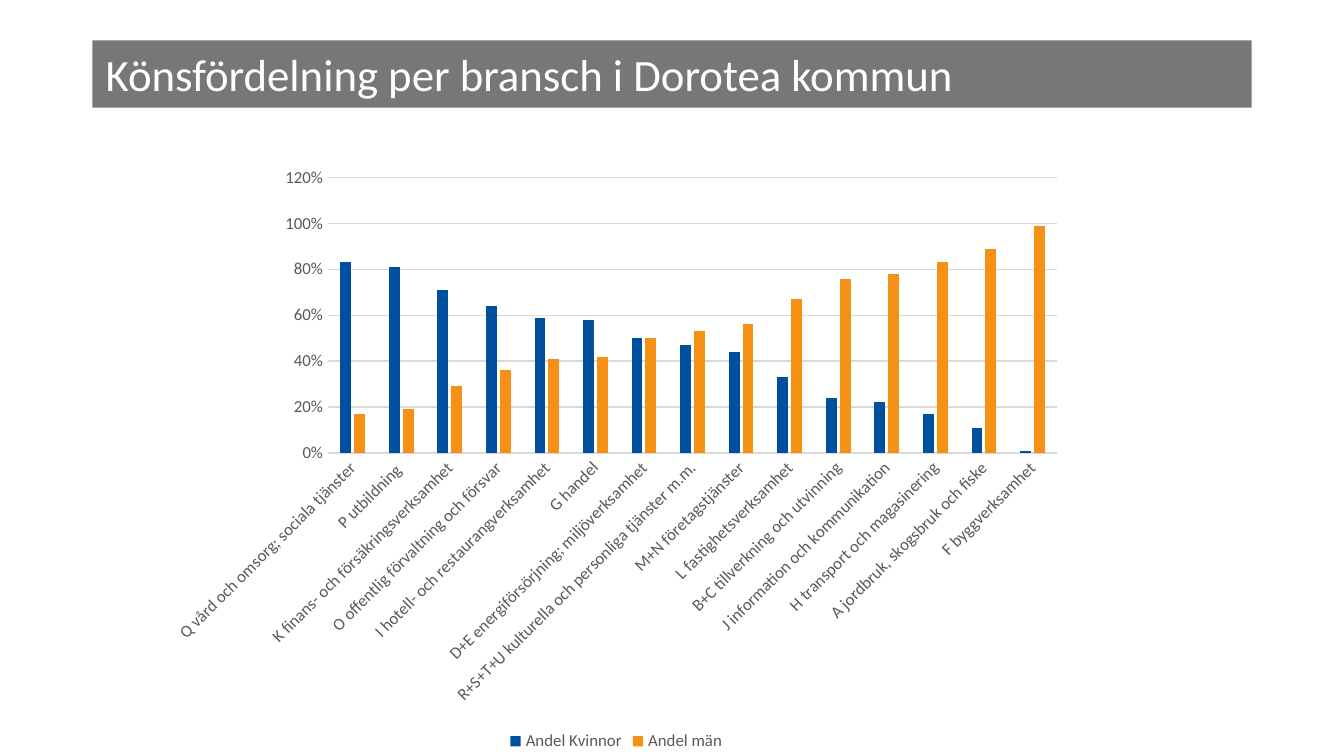
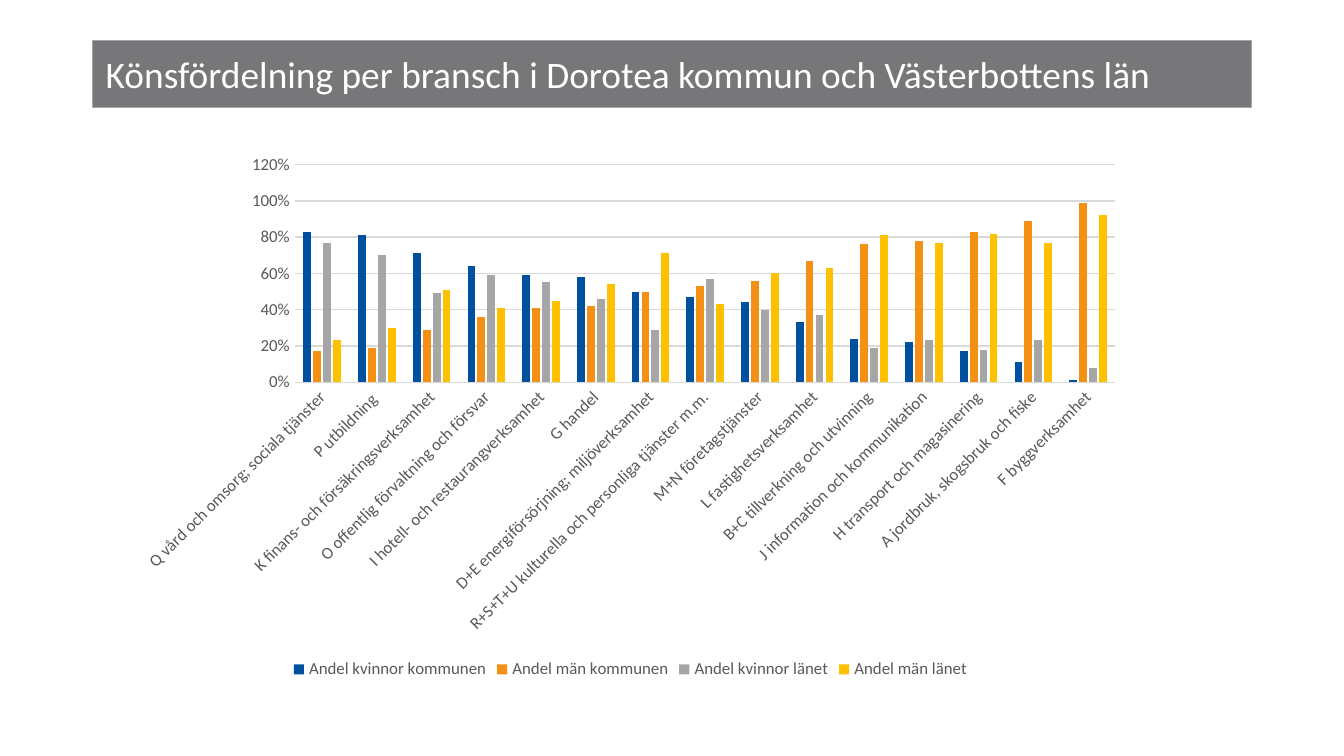
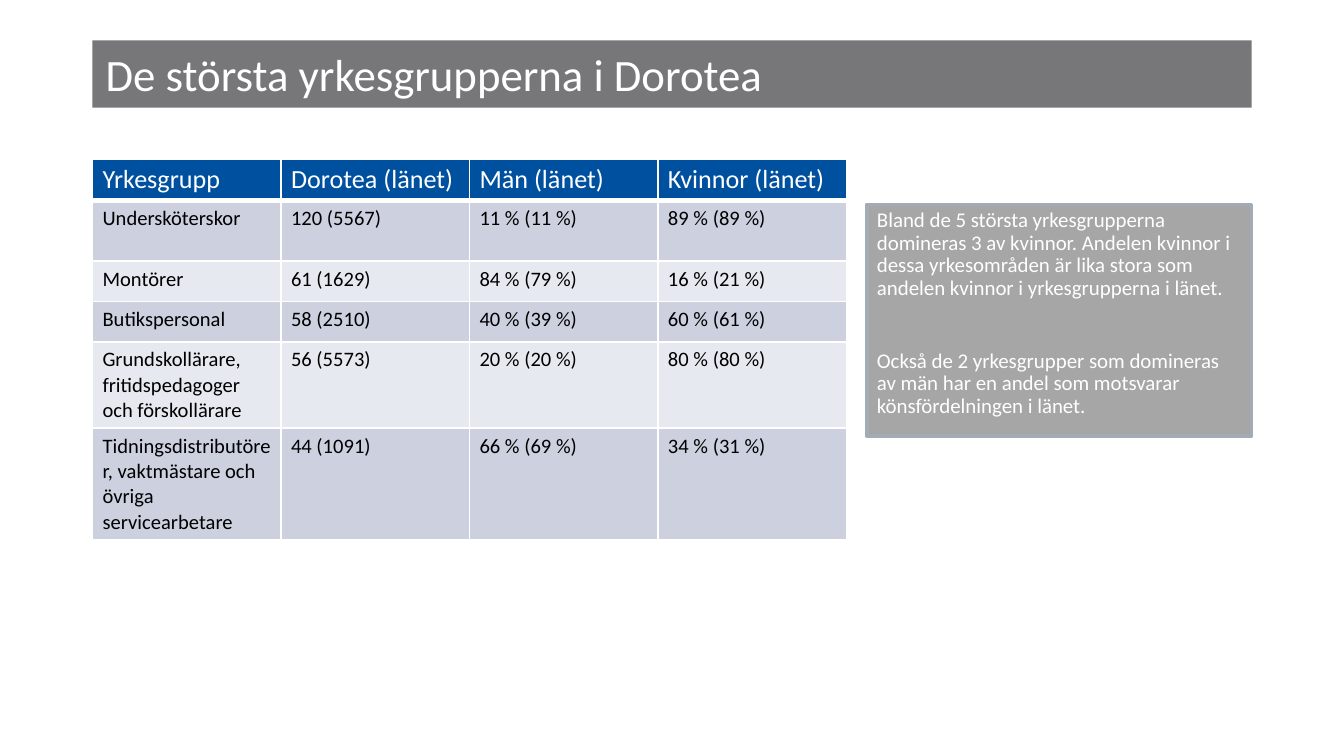
from dataclasses import dataclass

from lxml import etree
from pptx import Presentation
from pptx import util as u
from pptx.chart.data import CategoryChartData
from pptx.dml.color import RGBColor
from pptx.enum import chart as charts, shapes, text
from pptx.oxml.ns import qn


@dataclass(frozen=True)
class Theme:
    """Colours, type sizes and slide measures shared by all slides."""
    font: str = "Calibri"
    white: str = "FFFFFF"
    black: str = "000000"
    blue: str = "0050A0"
    orange: str = "F49014"
    yellow: str = "FFC000"
    grey: str = "A6A6A6"
    title_band: str = "77777A"
    note_edge: str = "A3ABB6"
    axis_text: str = "595959"
    axis_line: str = "D9D9D9"
    row_tints: tuple = ("CCD0DF", "E7E9F0")
    title_size: float = 24
    long_title_size: float = 20
    header_size: float = 14
    cell_size: float = 11
    note_size: float = 11.2
    chart_size: float = 9
    inset_x: float = 5.4
    inset_y: float = 2.7
    width: float = 10
    height: float = 10 * 9 / 16


THEME = Theme()

INDUSTRIES = [
    "Q vård och omsorg; sociala tjänster", "P utbildning ",
    "K finans- och försäkringsverksamhet", "O offentlig förvaltning och försvar",
    "I hotell- och restaurangverksamhet", "G handel",
    "D+E energiförsörjning; miljöverksamhet",
    "R+S+T+U kulturella och personliga tjänster m.m.", "M+N företagstjänster",
    "L fastighetsverksamhet", "B+C tillverkning och utvinning",
    "J information och kommunikation", "H transport och magasinering",
    "A jordbruk, skogsbruk och fiske", "F byggverksamhet",
]
WOMEN_MUNICIPALITY = [0.83, 0.81, 0.71, 0.64, 0.59, 0.58, 0.5, 0.47, 0.44,
                      0.33, 0.24, 0.22, 0.17, 0.11, 0.01]
WOMEN_COUNTY = [0.77, 0.7, 0.49, 0.59, 0.55, 0.46, 0.29, 0.57, 0.4,
                0.37, 0.19, 0.23, 0.18, 0.23, 0.08]
OCCUPATIONS = [
    ["Yrkesgrupp", "Dorotea (länet)", "Män (länet)", "Kvinnor (länet)"],
    ["Undersköterskor", "120 (5567)", "11 % (11 %)", "89 % (89 %)"],
    ["Montörer", "61 (1629)", "84 % (79 %)", "16 % (21 %)"],
    ["Butikspersonal", "58 (2510)", "40 % (39 %)", "60 % (61 %)"],
    ["Grundskollärare, fritidspedagoger och förskollärare",
     "56 (5573)", "20 % (20 %)", "80 % (80 %)"],
    ["Tidningsdistributörer, vaktmästare och övriga servicearbetare",
     "44 (1091)", "66 % (69 %)", "34 % (31 %)"],
]
OCCUPATION_ROW_UNITS = [1, 1.5, 1, 1, 2.1, 2.75]
NOTES = [
    "Bland de 5 största yrkesgrupperna domineras 3 av kvinnor. Andelen kvinnor i "
    "dessa yrkesområden är lika stora som andelen kvinnor i yrkesgrupperna i länet.",
    "Också de 2 yrkesgrupper som domineras av män har en andel som motsvarar "
    "könsfördelningen i länet.",
]


def area(left, top, width, height):
    """Turn percentages of the slide's size into lengths."""
    across, down = THEME.width / 100, THEME.height / 100
    return [u.Inches(value) for value in
            (left * across, top * down, width * across, height * down)]


def men(women):
    """Return the shares that remain after the women's shares."""
    return [round(1 - share, 2) for share in women]


def style_font(font, size, color):
    """Set the shared typeface with a size and a colour."""
    font.name = THEME.font
    font.size = u.Pt(size)
    font.bold = False
    font.color.rgb = RGBColor.from_string(color)


def paint(fill, color):
    """Fill with one solid colour."""
    fill.solid()
    fill.fore_color.rgb = RGBColor.from_string(color)


def set_line(line, color, width):
    """Set a line's colour and width."""
    line.color.rgb = RGBColor.from_string(color)
    line.width = u.Pt(width)


def set_margins(holder):
    """Set the tight margins of table cells and notes."""
    holder.margin_left = holder.margin_right = u.Pt(THEME.inset_x)
    holder.margin_top = holder.margin_bottom = u.Pt(THEME.inset_y)


def add_box(slide, place, color, anchor):
    """Add a flat rectangle ready for text."""
    shape = slide.shapes.add_shape(shapes.MSO_SHAPE.RECTANGLE, *area(*place))
    shape.shadow.inherit = False
    paint(shape.fill, color)
    shape.line.fill.background()
    shape.text_frame.word_wrap = True
    shape.text_frame.vertical_anchor = anchor
    return shape


def write(paragraph, words, size, color):
    """Write a left-aligned paragraph in one style."""
    paragraph.text = words
    paragraph.alignment = text.PP_ALIGN.LEFT
    style_font(paragraph.font, size, color)


def add_titled_slide(presentation, title, size=THEME.title_size):
    """Add a blank slide with the grey title band."""
    slide = presentation.slides.add_slide(presentation.slide_layouts[6])
    band = add_box(slide, (6.88, 5.33, 86.25, 8.9), THEME.title_band,
                   text.MSO_ANCHOR.MIDDLE)
    write(band.text_frame.paragraphs[0], title, size, THEME.white)
    return slide


def style_axis(axis):
    """Give an axis its label font and remove its tick marks."""
    axis.major_tick_mark = axis.minor_tick_mark = charts.XL_TICK_MARK.NONE
    style_font(axis.tick_labels.font, THEME.chart_size, THEME.axis_text)


def add_share_chart(slide, place, series_list):
    """Add a clustered column chart of shares per industry."""
    data = CategoryChartData(number_format="0%")
    data.categories = INDUSTRIES
    for name, values, _ in series_list:
        data.add_series(name, values)
    chart = slide.shapes.add_chart(
        charts.XL_CHART_TYPE.COLUMN_CLUSTERED, *area(*place), data).chart
    chart.has_title = False
    style_font(chart.font, 10, THEME.black)

    plot = chart.plots[0]
    plot.gap_width, plot.overlap = 219, -27
    plot.vary_by_categories = False
    for series, (_, _, color) in zip(plot.series, series_list):
        paint(series.format.fill, color)

    categories, values = chart.category_axis, chart.value_axis
    style_axis(categories)
    label_body = categories._element.find(qn("c:txPr")).find(qn("a:bodyPr"))
    label_body.set("rot", "-2700000")
    label_body.set("vert", "horz")
    set_line(categories.format.line, THEME.axis_line, 0.75)
    style_axis(values)
    values.tick_labels.number_format = "0%"
    values.tick_labels.number_format_is_linked = False
    values.format.line.fill.background()
    set_line(values.major_gridlines.format.line, THEME.axis_line, 0.75)

    chart.has_legend = True
    chart.legend.position = charts.XL_LEGEND_POSITION.BOTTOM
    chart.legend.include_in_layout = False
    style_font(chart.legend.font, THEME.chart_size, THEME.axis_text)


def set_borders(cell, color, widths):
    """Draw the left, right, top and bottom borders of a cell."""
    properties = cell._tc.get_or_add_tcPr()
    for index, (side, width) in enumerate(zip("LRTB", widths)):
        line = etree.Element(qn(f"a:ln{side}"), w=str(u.Pt(width)))
        fill = etree.SubElement(line, qn("a:solidFill"))
        etree.SubElement(fill, qn("a:srgbClr"), val=color)
        properties.insert(index, line)


def add_occupation_table(slide, place):
    """Add the table of occupations with a blue header and tinted rows."""
    left, top, width, height = area(*place)
    table = slide.shapes.add_table(len(OCCUPATIONS), len(OCCUPATIONS[0]),
                                   left, top, width, height).table
    table.horz_banding = False
    unit = height / sum(OCCUPATION_ROW_UNITS)
    for index, (row, units) in enumerate(zip(table.rows, OCCUPATION_ROW_UNITS)):
        row.height = u.Emu(round(unit * units))
        header = index == 0
        for cell, words in zip(row.cells, OCCUPATIONS[index]):
            paint(cell.fill, THEME.blue if header else THEME.row_tints[(index - 1) % 2])
            set_borders(cell, THEME.white, (1, 1, 1, 3 if header else 1))
            set_margins(cell)
            write(cell.text_frame.paragraphs[0], words,
                  THEME.header_size if header else THEME.cell_size,
                  THEME.white if header else THEME.black)


def add_note(slide, place):
    """Add the grey box with comments on the table."""
    box = add_box(slide, place, THEME.grey, text.MSO_ANCHOR.TOP)
    set_line(box.line, THEME.note_edge, 2)
    frame = box.text_frame
    set_margins(frame)
    for index, words in enumerate(NOTES):
        paragraph = frame.add_paragraph() if index else frame.paragraphs[0]
        paragraph.line_spacing = 0.9
        paragraph.space_before = u.Pt(27 if index else 0)
        write(paragraph, words, THEME.note_size, THEME.white)


def main():
    """Build the three slides and save them."""
    presentation = Presentation()
    presentation.slide_width = u.Inches(THEME.width)
    presentation.slide_height = u.Inches(THEME.height)

    slide = add_titled_slide(presentation, "Könsfördelning per bransch i Dorotea kommun")
    add_share_chart(slide, (11.7, 20.6, 68.3, 79.47), [
        ("Andel Kvinnor", WOMEN_MUNICIPALITY, THEME.blue),
        ("Andel män", men(WOMEN_MUNICIPALITY), THEME.orange),
    ])

    slide = add_titled_slide(
        presentation, "Könsfördelning per bransch i Dorotea kommun och Västerbottens län",
        THEME.long_title_size)
    add_share_chart(slide, (9.3, 19.05, 75.2, 71.5), [
        ("Andel kvinnor kommunen", WOMEN_MUNICIPALITY, THEME.blue),
        ("Andel män kommunen", men(WOMEN_MUNICIPALITY), THEME.orange),
        ("Andel kvinnor länet", WOMEN_COUNTY, THEME.grey),
        ("Andel män länet", men(WOMEN_COUNTY), THEME.yellow),
    ])

    slide = add_titled_slide(presentation, "De största yrkesgrupperna i Dorotea")
    add_occupation_table(slide, (6.88, 21, 56.1, 50))
    add_note(slide, (64.5, 27.05, 28.63, 30.6))

    presentation.save("out.pptx")


if __name__ == "__main__":
    main()
